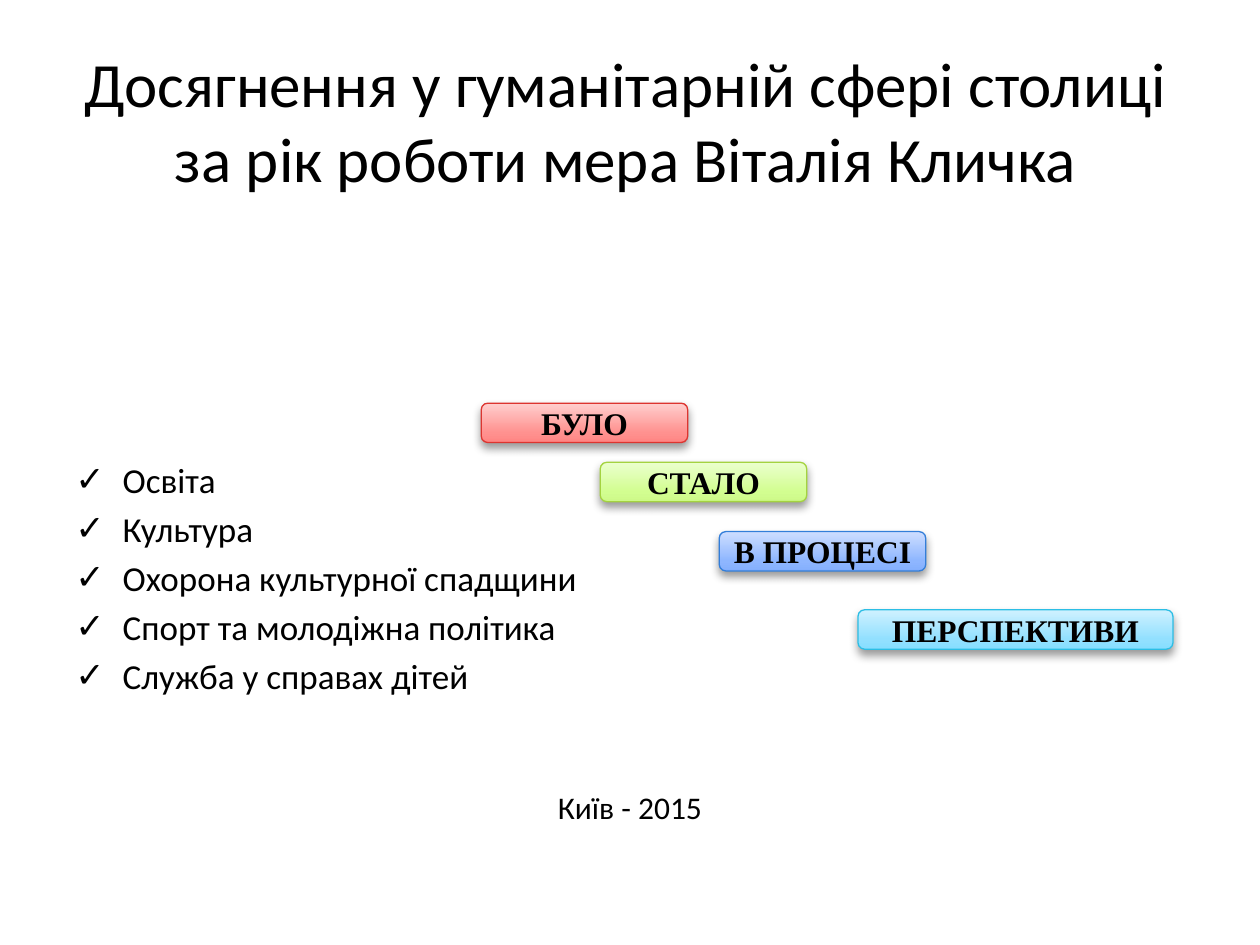
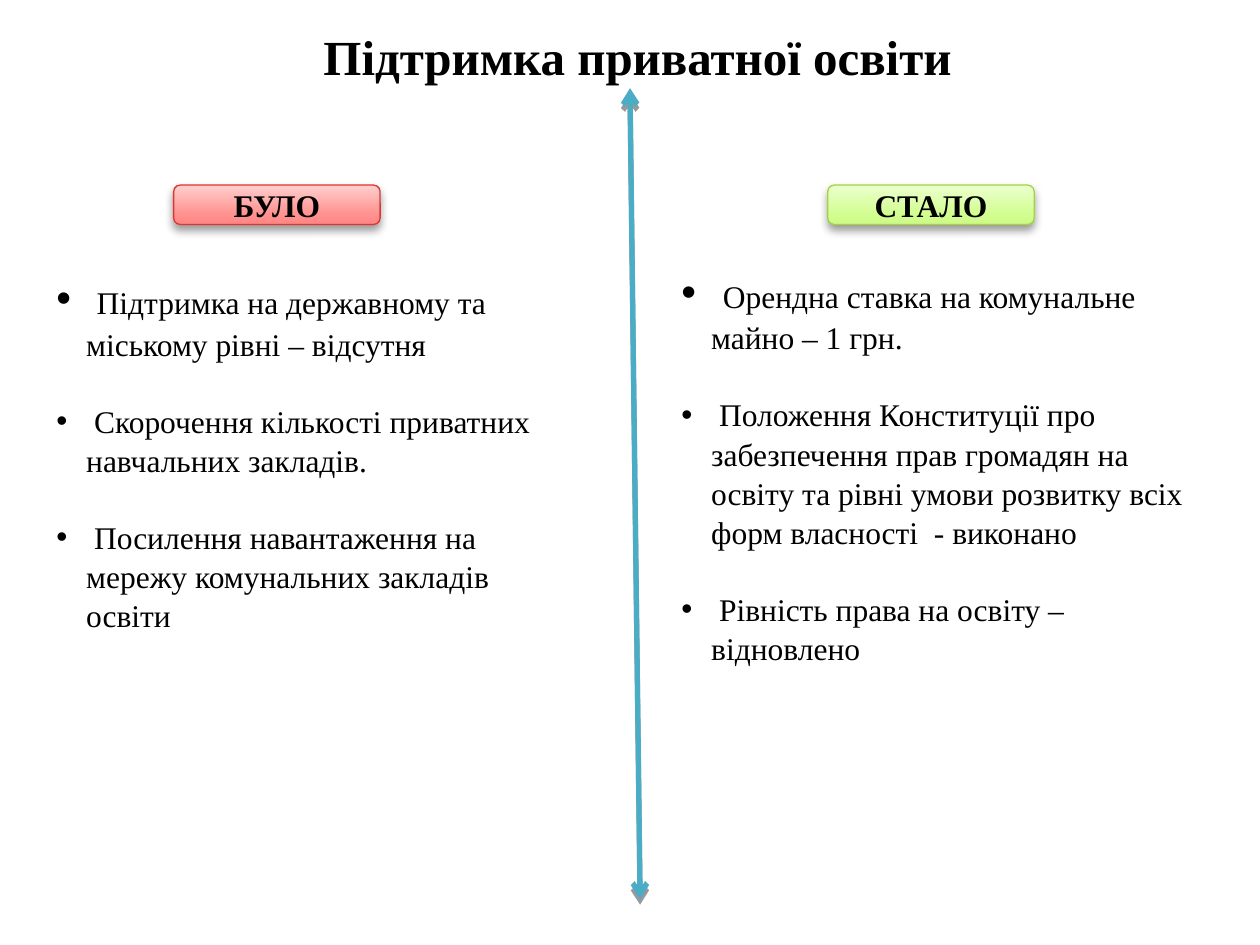
from copy import deepcopy

from lxml.etree import SubElement as Sub
from pptx import Presentation
from pptx.dml.color import RGBColor as RGB
from pptx.enum.shapes import MSO_CONNECTOR as LINK, MSO_SHAPE as SHAPE
from pptx.enum.text import MSO_ANCHOR as ANCHOR, PP_ALIGN as ALIGN
from pptx.oxml.ns import qn
from pptx.util import Pt

BLACK = RGB(0x00, 0x00, 0x00)
TEAL = RGB(0x4B, 0xAC, 0xC6)
# Each theme: three gradient colours from bottom to top, then the outline.
RED = [RGB(0xFF, 0x85, 0x83), RGB(0xFF, 0x91, 0x8F),
       RGB(0xFF, 0xCF, 0xCE), RGB(0xDD, 0x35, 0x30)]
GREEN = [RGB(0xCD, 0xF9, 0x89), RGB(0xD2, 0xFE, 0x90),
         RGB(0xEB, 0xFF, 0xCE), RGB(0xA4, 0xD3, 0x40)]
BLUE = [RGB(0x84, 0xAF, 0xFD), RGB(0x8E, 0xB6, 0xFF),
        RGB(0xCE, 0xDE, 0xFF), RGB(0x33, 0x7E, 0xD9)]
CYAN = [RGB(0x86, 0xDE, 0xFF), RGB(0x92, 0xE0, 0xFF),
        RGB(0xCF, 0xF1, 0xFF), RGB(0x2C, 0xBE, 0xE5)]
STOPS = (0, 0.25, 1)

SANS, SERIF = "Calibri", "Times New Roman"
WAS, NOW = ("БУЛО", RED), ("СТАЛО", GREEN)
BADGE = (118, 22.5)

TOPICS = ["Освіта", "Культура", "Охорона культурної спадщини",
          "Спорт та молодіжна політика", "Служба у справах дітей"]
BEFORE = ["Підтримка на державному та міському рівні – відсутня",
          "Скорочення кількості приватних навчальних закладів.",
          "Посилення навантаження на мережу комунальних закладів освіти"]
AFTER = ["Орендна ставка на комунальне майно – 1 грн.",
         "Положення Конституції про забезпечення прав громадян на освіту "
         "та рівні умови розвитку всіх форм власності  - виконано",
         "Рівність права на освіту – відновлено"]


def put(item, **vals):
    for name, val in vals.items():
        setattr(item, name, val)


def write(para, text, size, face, bold=False):
    run = para.add_run()
    run.text = text
    put(run.font, size=Pt(size), name=face, bold=bold)
    run.font.color.rgb = BLACK


def shade(item, blur):
    """Give a shape or connector a soft shadow below it."""
    effects = Sub(item._element.spPr, qn("a:effectLst"))
    outer = Sub(effects, qn("a:outerShdw"), blurRad=str(Pt(blur)),
                dist=str(Pt(3)), dir="5400000", rotWithShape="0")
    black = Sub(outer, qn("a:srgbClr"), val=str(BLACK))
    Sub(black, qn("a:alpha"), val="40000")


def bullet(para, mark, hang):
    props = para._p.get_or_add_pPr()
    put_xml = {"marL": Pt(hang), "indent": -Pt(hang)}
    for name, val in put_xml.items():
        props.set(name, str(val))
    Sub(props, qn("a:buFont"), typeface="Arial")
    Sub(props, qn("a:buChar"), char=mark)


def frame(slide, box, **vals):
    text = slide.shapes.add_textbox(*map(Pt, box)).text_frame
    put(text, word_wrap=True, **vals)
    return text


def title(slide, box, text, size, face, anchor, bold=False, spacing=1.0):
    para = frame(slide, box, vertical_anchor=anchor).paragraphs[0]
    put(para, alignment=ALIGN.CENTER, line_spacing=spacing)
    write(para, text, size, face, bold)


def badge(slide, box, text, theme):
    shape = slide.shapes.add_shape(SHAPE.ROUNDED_RECTANGLE, *map(Pt, box))
    shape.fill.gradient()
    stops = shape._element.spPr.find(".//" + qn("a:gsLst"))
    stops.insert(1, deepcopy(stops[0]))
    for stop, place, color in zip(shape.fill.gradient_stops, STOPS, theme):
        stop.position = place
        stop.color.rgb = color
    shape.fill.gradient_angle = 90
    shape.line.color.rgb = theme[-1]
    shape.line.width = Pt(0.75)
    shade(shape, 5.2)
    body = shape.text_frame
    put(body, word_wrap=False, vertical_anchor=ANCHOR.MIDDLE,
        margin_top=0, margin_bottom=0)
    para = body.paragraphs[0]
    para.alignment = ALIGN.CENTER
    write(para, text, 18, SERIF, True)


def agenda(slide, box):
    """List the topics in the lower part of the box, with the place and year."""
    body = frame(slide, box, margin_top=Pt(136))
    for i, topic in enumerate(TOPICS):
        para = body.add_paragraph() if i else body.paragraphs[0]
        para.space_after = Pt(4)
        bullet(para, "✓", 27)
        write(para, topic, 20, SANS)
    para = body.add_paragraph()
    put(para, alignment=ALIGN.CENTER, space_before=Pt(48))
    write(para, "Київ - 2015", 18, SANS)


def column(slide, box, points, face):
    """List points; the first opens with a wider gap set in the given face."""
    body = frame(slide, box)
    for i, point in enumerate(points):
        para = body.add_paragraph() if i else body.paragraphs[0]
        put(para, line_spacing=1.04, space_after=Pt(21.5))
        bullet(para, "•", 17)
        if i:
            write(para, " " + point, 18, SERIF)
        else:
            write(para, " ", 24, face, face == SERIF)
            write(para, point, 18, SERIF)


def divide(slide, start, end):
    line = slide.shapes.add_connector(LINK.STRAIGHT, *map(Pt, start + end))
    line.line.color.rgb = TEAL
    line.line.width = Pt(3)
    for tip in ("a:headEnd", "a:tailEnd"):
        Sub(line.line._ln, qn(tip), type="arrow")
    shade(line, 0)


def cover(slide):
    title(slide, (31, 21.6, 653, 140),
          "Досягнення у гуманітарній сфері столиці "
          "за рік роботи мера Віталія Кличка", 36, SANS, ANCHOR.TOP)
    agenda(slide, (36, 126, 648, 356.4))
    wide, high = BADGE
    for left, top, width, label in [
            (275, 230.4, wide, WAS), (343, 264.2, wide, NOW),
            (411, 303.8, wide, ("В ПРОЦЕСІ", BLUE)),
            (490.3, 348.5, 180, ("ПЕРСПЕКТИВИ", CYAN))]:
        badge(slide, (left, top, width, high), *label)


def compare(slide):
    divide(slide, (360, 50.4), (365.8, 514))
    title(slide, (8.6, 5, 711.4, 60.5), "Підтримка приватної освіти",
          28, SERIF, ANCHOR.MIDDLE, True, 0.8)
    for left, label in [(99.2, WAS), (473, NOW)]:
        badge(slide, (left, 105.8, *BADGE), *label)
    column(slide, (25.2, 151.2, 311.8, 218.2), BEFORE, SERIF)
    column(slide, (382.3, 147.6, 320.4, 269.3), AFTER, "Arial")


def main():
    deck = Presentation()
    put(deck, slide_width=Pt(720), slide_height=Pt(540))
    for build in (cover, compare):
        build(deck.slides.add_slide(deck.slide_layouts[6]))
    deck.save("out.pptx")


if __name__ == "__main__":
    main()
